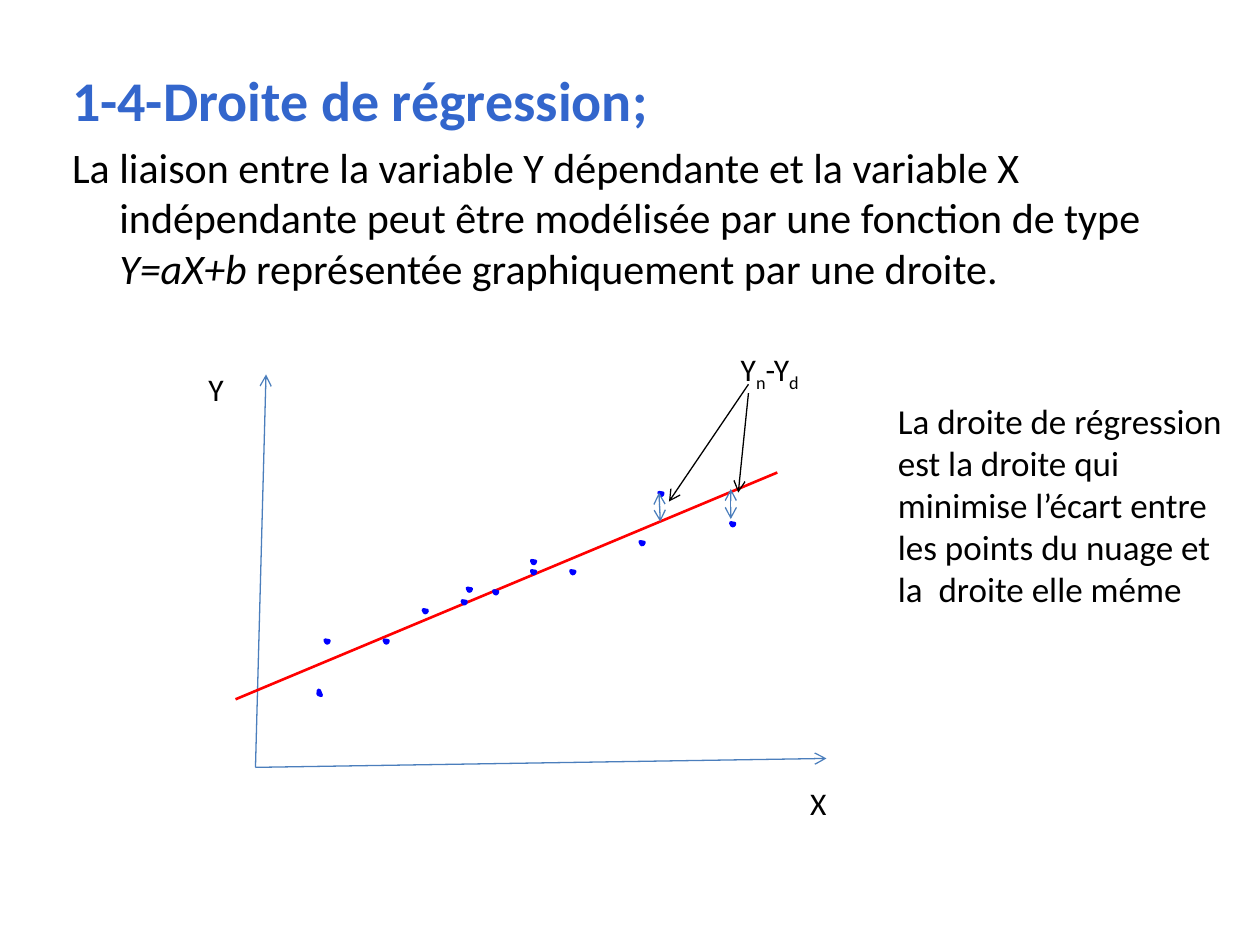
from lxml.etree import SubElement
from pptx import Presentation
from pptx.dml.color import RGBColor
from pptx.enum.shapes import MSO_CONNECTOR
from pptx.oxml.ns import qn
from pptx.util import Pt

COLORS = {
    "heading": "3366CC",
    "text": "000000",
    "axis": "4B7EBC",
    "regression": "FF0000",
    "point_fill": "4F81BD",
    "point_line": "0000FF",
}
FONT = "Calibri"

# Plot positions are relative to the top left corner of the plot
POINT_OUTLINE = [(0, 0), (2.2, 0.4), (1.7, 1.5), (0.8, 1.6)]
TALL_OUTLINE = [(0, 0), (-1.8, -0.6), (-1.6, -2.8), (-1.2, -2.9)]
CLOUD = [
    (253.8, 113.6), (170.2, 141.7), (152.2, 147.4), (191.8, 130.2),
    (129.9, 152.5), (155.1, 140.2), (264.6, 85.5), (305.6, 102.8),
    (73.8, 169.8), (107.6, 169.8), (214.2, 130.2), (191.8, 124.4),
]
LOWEST_POINT = (71.6, 201.4)


def rgb(name):
    return RGBColor.from_string(COLORS[name])


def add_text(para, text, size=18, color="text", bold=False, italic=False, baseline=0):
    span = para.add_run()
    span.text = text
    span.font.name = FONT
    span.font.size = Pt(size)
    span.font.bold = bold
    span.font.italic = italic
    span.font.color.rgb = rgb(color)
    if baseline:
        span.font._element.set("baseline", str(baseline * 1000))


def add_box(page, left, top, width, height, wrap=True):
    box = page.shapes.add_textbox(Pt(left), Pt(top), Pt(width), Pt(height))
    box.text_frame.word_wrap = wrap
    return box.text_frame.paragraphs[0]


def add_line(page, origin, start, end, color="axis", width=0.75, head=False, tail=False):
    left, top = origin
    line = page.shapes.add_connector(
        MSO_CONNECTOR.STRAIGHT,
        Pt(left + start[0]), Pt(top + start[1]),
        Pt(left + end[0]), Pt(top + end[1]))
    line.line.color.rgb = rgb(color)
    line.line.width = Pt(width)
    outline = line.line._get_or_add_ln()
    for tag, wanted in (("a:headEnd", head), ("a:tailEnd", tail)):
        if wanted:
            SubElement(outline, qn(tag), type="arrow")
    SubElement(line._element.spPr, qn("a:effectLst"))


def add_point(page, origin, position, outline=POINT_OUTLINE):
    left, top = origin[0] + position[0], origin[1] + position[1]
    corners = [(Pt(left + x), Pt(top + y)) for x, y in outline]
    builder = page.shapes.build_freeform(*corners[0])
    builder.add_line_segments(corners[1:], close=True)
    point = builder.convert_to_shape()
    point.shadow.inherit = False
    point.fill.solid()
    point.fill.fore_color.rgb = rgb("point_fill")
    point.line.color.rgb = rgb("point_line")
    point.line.width = Pt(2)


def fill_body(page, left, top, width, height):
    page.shapes.title._element.getparent().remove(page.shapes.title._element)
    body = page.placeholders[1]
    body.left, body.top, body.width, body.height = map(Pt, (left, top, width, height))
    heading = body.text_frame.paragraphs[0]
    lead = body.text_frame.add_paragraph()
    add_text(heading, "1-4-Droite de régression;", size=32, color="heading", bold=True)
    add_text(lead, "La liaison entre la variable Y dépendante et la variable X "
             "indépendante peut être modélisée par une fonction de type ", size=24)
    add_text(lead, "Y=aX+b ", size=24, italic=True)
    add_text(lead, "représentée graphiquement par une droite.", size=24)
    # Hanging indent without bullets
    for para, space in ((heading, 6.4), (lead, 4.8)):
        para.space_before = Pt(space)
        properties = para._p.get_or_add_pPr()
        properties.set("marL", str(Pt(27)))
        properties.set("indent", str(Pt(-27)))
        SubElement(properties, qn("a:buNone"))


def draw_plot(page, left, top):
    origin = (left, top)
    # Axes and their names
    corner = (34, 242.5)
    for tip in ((40, 18), (360.3, 237.4)):
        add_line(page, origin, corner, tip, tail=True)
    add_text(add_box(page, left, top + 12, 28, 29), "Y")
    add_text(add_box(page, left + 343.8, top + 248.2, 24, 29, wrap=False), "X")

    # Regression line and cloud of points
    add_line(page, origin, (22.6, 203.6), (332.2, 74), color="regression", width=1.5)
    for position in CLOUD:
        add_point(page, origin, position)
    add_point(page, origin, LOWEST_POINT, TALL_OUTLINE)

    # Gaps between points and line, with pointers from their label
    for start, end in (((264.6, 85.5), (265.3, 102.1)), ((305.6, 83.4), (305.6, 100.6))):
        add_line(page, origin, start, end, head=True, tail=True)
    for start, end in (((315.7, 23.6), (270.3, 90.6)), ((315.7, 28.6), (309.9, 85.5))):
        add_line(page, origin, start, end, color="text", tail=True)
    label = add_box(page, left + 304.2, top + 0.6, 56, 29)
    for text, baseline in (("Y", 0), ("n", -25), ("-Y", 0), ("d", -25)):
        add_text(label, text, baseline=baseline)


def add_note(page, left, top, width, height):
    add_text(add_box(page, left, top, width, height),
             "La droite de régression est la droite qui minimise l’écart entre "
             "les points du nuage et la  droite elle méme", size=20)


def main():
    deck = Presentation()
    deck.slide_width, deck.slide_height = Pt(720), Pt(540)
    page = deck.slides.add_slide(deck.slide_layouts[1])
    fill_body(page, 34, 34, 672, 434)
    draw_plot(page, 112, 196)
    add_note(page, 506, 224.6, 202.5, 128)
    deck.save("out.pptx")


if __name__ == "__main__":
    main()
